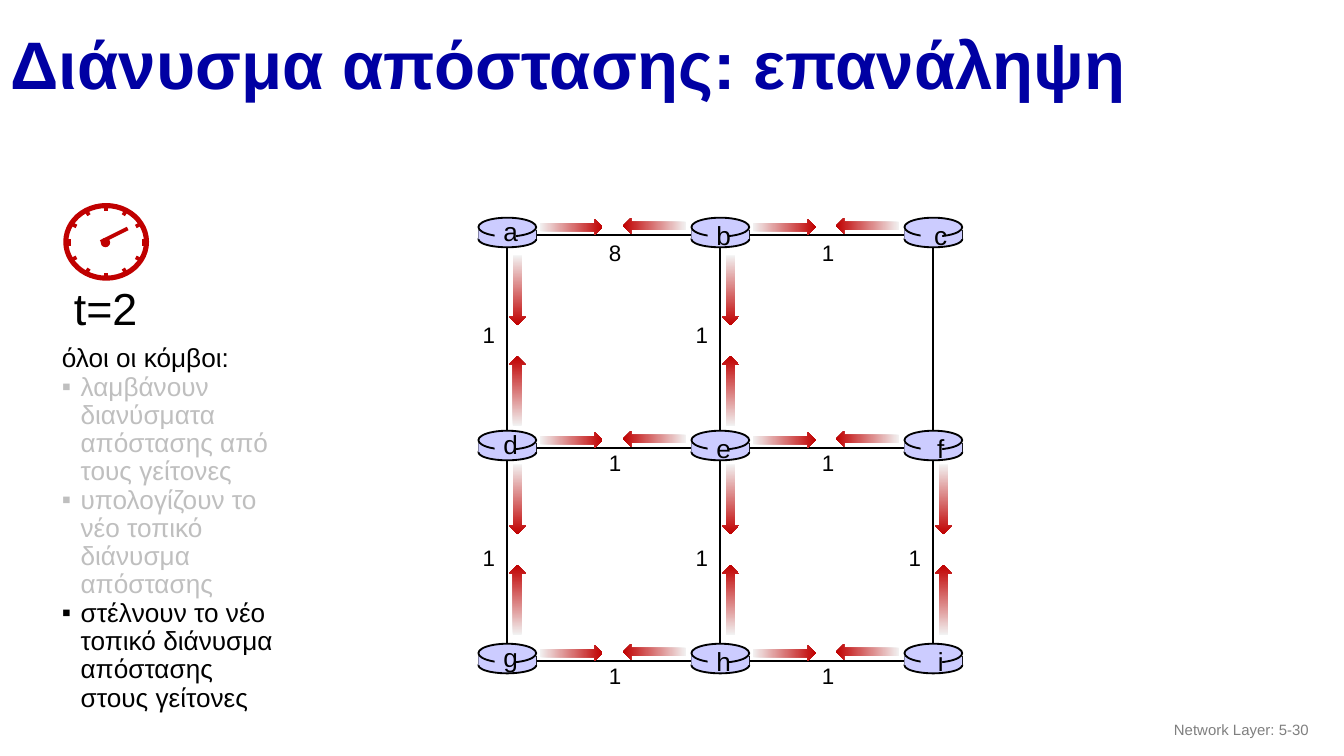
import math

import lxml.etree
import pptx
import pptx.dml.color
import pptx.enum.shapes
import pptx.enum.text
import pptx.oxml.ns
import pptx.util

Inches = pptx.util.Inches
Pt = pptx.util.Pt
SHAPE = pptx.enum.shapes.MSO_SHAPE
ALIGN = pptx.enum.text.PP_ALIGN
ANCHOR = pptx.enum.text.MSO_ANCHOR

BLACK, RED, ROUTER, PALE = "000000", "C00000", "CCCCFF", "F2F2F2"
NAVY, GREY, FADED = "0000A3", "7F7F7F", "BFBFBF"

TITLE = "Διάνυσμα απόστασης: επανάληψη"
FOOTER = "Network Layer: 5-30"
TIME = "t=2"
STEPS_HEADING = "όλοι οι κόμβοι:"
STEPS = [
    ("λαμβάνουν διανύσματα απόστασης από τους γείτονες", FADED),
    ("υπολογίζουν το νέο τοπικό διάνυσμα απόστασης", FADED),
    ("στέλνουν το νέο τοπικό διάνυσμα απόστασης στους γείτονες", BLACK),
]
ROUTERS = ["abc", "def", "ghi"]
ROW_COSTS = ["81", "11", "11"]      # links between neighbouring columns
COLUMN_COSTS = ["11 ", "111"]       # links between neighbouring rows; c-f has no cost

SLIDE_WIDTH = Inches(10)
SLIDE_HEIGHT = SLIDE_WIDTH * 9 // 16
GRID_LEFT, GRID_TOP, PITCH = 3.77, 1.75, 3.17 / 2
ROW_ARROW, COLUMN_ARROW = (0.47, 0.12), (0.52, 0.13)
CLOCK_X, CLOCK_Y, CLOCK_RX, CLOCK_RY = 0.79, 1.8, 0.3, 0.27


def color(value):
    return pptx.dml.color.RGBColor.from_string(value)


def add_shape(shapes, kind, left, top, width, height, fill=None, line=None, weight=1):
    shape = shapes.add_shape(kind, Inches(left), Inches(top), Inches(width), Inches(height))
    shape.shadow.inherit = False
    if fill:
        shape.fill.solid()
        shape.fill.fore_color.rgb = color(fill)
    else:
        shape.fill.background()
    if line:
        shape.line.color.rgb = color(line)
        shape.line.width = Pt(weight)
    else:
        shape.line.fill.background()
    return shape


def add_line(shapes, x1, y1, x2, y2, line=BLACK, weight=1):
    connector = shapes.add_connector(pptx.enum.shapes.MSO_CONNECTOR.STRAIGHT,
                                     Inches(x1), Inches(y1), Inches(x2), Inches(y2))
    connector.line.color.rgb = color(line)
    connector.line.width = Pt(weight)
    properties = connector._element.spPr
    lxml.etree.SubElement(properties, pptx.oxml.ns.qn("a:effectLst"))


def style(paragraph, text, size, font_color, bold=False, align=ALIGN.LEFT):
    paragraph.text = text
    paragraph.alignment = align
    paragraph.font.name = "Arial"
    paragraph.font.size = Pt(size)
    paragraph.font.bold = bold
    paragraph.font.color.rgb = color(font_color)


def add_text(shapes, left, top, width, height, text, size, font_color=BLACK,
             bold=False, align=ALIGN.LEFT, anchor=ANCHOR.TOP, wrap=False):
    box = shapes.add_textbox(Inches(left), Inches(top), Inches(width), Inches(height))
    frame = box.text_frame
    frame.word_wrap = wrap
    frame.vertical_anchor = anchor
    frame.margin_left = frame.margin_right = Inches(0.07)
    frame.margin_top = frame.margin_bottom = Inches(0.04)
    style(frame.paragraphs[0], text, size, font_color, bold, align)
    return frame


def add_bullet(paragraph, bullet_color):
    properties = paragraph._p.get_or_add_pPr()
    properties.set("marL", str(Inches(0.14)))
    properties.set("indent", str(-Inches(0.14)))
    qn = pptx.oxml.ns.qn
    holder = lxml.etree.SubElement(properties, qn("a:buClr"))
    lxml.etree.SubElement(holder, qn("a:srgbClr"), val=bullet_color)
    lxml.etree.SubElement(properties, qn("a:buFont"), typeface="Arial")
    lxml.etree.SubElement(properties, qn("a:buChar"), char="▪")


def add_arrow(shapes, center_x, center_y, size, rotation):
    width, height = size
    arrow = add_shape(shapes, SHAPE.RIGHT_ARROW, center_x - width / 2,
                      center_y - height / 2, width, height)
    arrow.rotation = rotation
    arrow.fill.gradient()
    arrow.fill.gradient_angle = 0
    for stop, position, value in zip(arrow.fill.gradient_stops, (0, 1), (PALE, RED)):
        stop.position = position
        stop.color.rgb = color(value)


def add_router(shapes, column, row, letter):
    left = GRID_LEFT - 0.21 + column * PITCH
    top = GRID_TOP - 0.13 + row * PITCH
    router = shapes.add_group_shape().shapes
    add_shape(router, SHAPE.OVAL, left, top + 0.1, 0.43, 0.12, ROUTER, BLACK)
    for side in (left, left + 0.43):
        add_line(router, side, top + 0.09, side, top + 0.17)
    add_shape(router, SHAPE.RECTANGLE, left, top + 0.09, 0.43, 0.07, ROUTER)
    add_shape(router, SHAPE.OVAL, left, top, 0.43, 0.14, ROUTER, BLACK)
    add_shape(router, SHAPE.RECTANGLE, left + 0.12, top + 0.04, 0.16, 0.15, ROUTER)
    text_top = top - (0.03 if column else 0.06)
    text_left = left + (0.1 if column == 2 else 0.07)
    add_text(router, text_left, text_top, 0.34, 0.34, letter, 14, align=ALIGN.CENTER)


def add_network(shapes):
    span = 2 * PITCH
    middle_x, middle_y = GRID_LEFT + PITCH, GRID_TOP + PITCH
    add_line(shapes, middle_x, GRID_TOP + span, middle_x, GRID_TOP)
    add_line(shapes, GRID_LEFT, middle_y, GRID_LEFT + span, middle_y)
    add_shape(shapes, SHAPE.RECTANGLE, GRID_LEFT, GRID_TOP, span, span, line=BLACK)
    for row, letters in enumerate(ROUTERS):
        for column, letter in enumerate(letters):
            add_router(shapes, column, row, letter)
    for row, costs in enumerate(ROW_COSTS):
        for column, cost in enumerate(costs):
            x, y = GRID_LEFT + column * PITCH, GRID_TOP + row * PITCH
            cost_top = y - (0.03 if row else 0.01)
            add_text(shapes, x + 0.69, cost_top, 0.25, 0.28, cost, 12)
            add_arrow(shapes, x + 0.48, y - 0.06, ROW_ARROW, 0)
            add_arrow(shapes, x + 1.1, y - 0.07, ROW_ARROW, 180)
    for row, costs in enumerate(COLUMN_COSTS):
        for column, cost in enumerate(costs):
            if cost == " ":
                continue
            x, y = GRID_LEFT + column * PITCH, GRID_TOP + row * PITCH
            add_text(shapes, x - 0.25, y + (0.67 if row else 0.6), 0.25, 0.28, cost, 12)
            first = y + (0.38 if row else 0.41)
            add_arrow(shapes, x + 0.08, first, COLUMN_ARROW, 90)
            add_arrow(shapes, x + 0.08, first + 0.75, COLUMN_ARROW, 270)


def add_clock(shapes):
    clock = shapes.add_group_shape().shapes
    add_text(clock, 0.48, 2.05, 0.66, 0.48, TIME, 24)
    add_shape(clock, SHAPE.OVAL, CLOCK_X - CLOCK_RX, CLOCK_Y - CLOCK_RY,
              2 * CLOCK_RX, 2 * CLOCK_RY, line=RED, weight=2.75)
    for hour in range(12):
        angle = math.radians(30 * hour)
        across, up = CLOCK_RX * math.sin(angle), CLOCK_RY * math.cos(angle)
        if hour in (3, 9):
            x = CLOCK_X + 0.93 * across
            add_line(clock, x, CLOCK_Y + 0.03, x, CLOCK_Y - 0.02, RED, 2)
        else:
            add_line(clock, CLOCK_X + across, CLOCK_Y - up,
                     CLOCK_X + 0.85 * across, CLOCK_Y - 0.85 * up, RED, 2)
    add_shape(clock, SHAPE.OVAL, CLOCK_X - 0.04, CLOCK_Y - 0.03, 0.07, 0.07, RED)
    add_line(shapes, 0.95, 1.7, 0.75, 1.8, RED, 2)


def add_steps(shapes):
    frame = add_text(shapes, 0.39, 2.53, 1.8, 2.83, STEPS_HEADING, 14, wrap=True)
    frame.paragraphs[0].line_spacing = 0.9
    for text, text_color in STEPS:
        paragraph = frame.add_paragraph()
        style(paragraph, text, 14, text_color)
        paragraph.line_spacing = 0.9
        add_bullet(paragraph, text_color)


def main():
    presentation = pptx.Presentation()
    presentation.slide_width, presentation.slide_height = SLIDE_WIDTH, SLIDE_HEIGHT
    shapes = presentation.slides.add_slide(presentation.slide_layouts[6]).shapes
    title = add_text(shapes, 0.01, 0.14, 8.62, 0.73, TITLE, 36, NAVY, bold=True,
                     anchor=ANCHOR.MIDDLE, wrap=True)
    title.paragraphs[0].line_spacing = 0.9
    add_text(shapes, 7.56, 5.28, 2.25, 0.3, FOOTER, 8, GREY, align=ALIGN.RIGHT,
             anchor=ANCHOR.MIDDLE, wrap=True)
    add_network(shapes)
    add_steps(shapes)
    add_clock(shapes)
    presentation.save("out.pptx")


if __name__ == "__main__":
    main()
